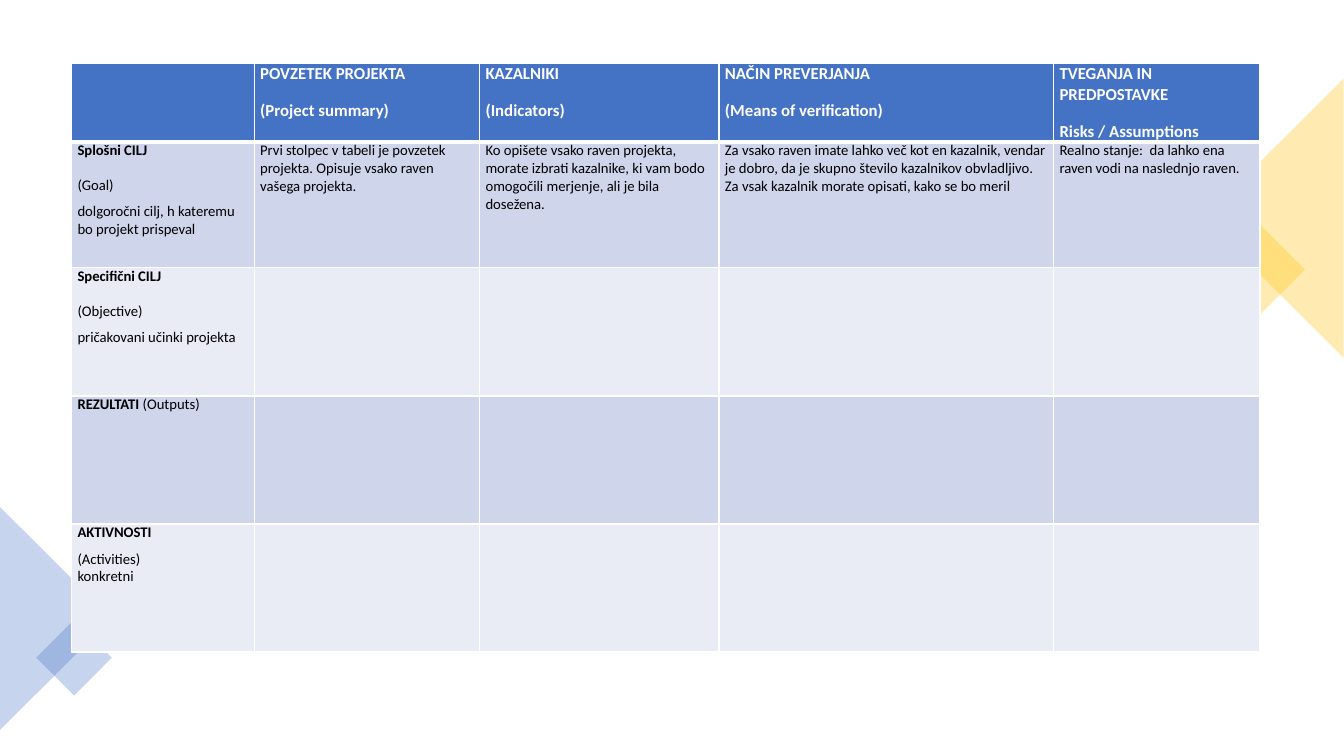
from lxml import etree
from pptx import Presentation
from pptx.dml.color import RGBColor
from pptx.enum import shapes
from pptx.oxml import ns
from pptx.util import Pt

BLUE = RGBColor(0x44, 0x72, 0xC4)
GOLD = RGBColor(0xFF, 0xC0, 0x00)
WHITE = RGBColor(0xFF, 0xFF, 0xFF)
BLACK = RGBColor(0, 0, 0)
BANDS = [RGBColor(0xCF, 0xD5, 0xEA), RGBColor(0xE9, 0xEB, 0xF5)]
FONT = "Calibri"

# Content: each cell is a list of paragraphs (bold part, plain part, space around)
HEADINGS = [
    [],
    [("POVZETEK PROJEKTA", "", 6), ("(Project summary)", "", 6)],
    [("KAZALNIKI", "", 6), ("(Indicators)", "", 6)],
    [("NAČIN PREVERJANJA", "", 6), ("(Means of verification)", "", 6)],
    [("TVEGANJA IN PREDPOSTAVKE", "", 6), ("Risks / Assumptions", "", 6)],
]
LEVELS = [
    [
        [("Splošni CILJ", "", 6), ("", "(Goal)", 6),
         ("", "dolgoročni cilj, h kateremu bo projekt prispeval", 0)],
        [("", "Prvi stolpec v tabeli je povzetek projekta. Opisuje vsako raven "
              "vašega projekta.", 6)],
        [("", "Ko opišete vsako raven projekta, morate izbrati kazalnike, ki vam "
              "bodo omogočili merjenje, ali je bila dosežena.", 6)],
        [("", "Za vsako raven imate lahko več kot en kazalnik, vendar je dobro, da "
              "je skupno število kazalnikov obvladljivo. Za vsak kazalnik morate "
              "opisati, kako se bo meril", 0)],
        [("", "Realno stanje:  da lahko ena raven vodi na naslednjo raven.", 0)],
    ],
    [[("Specifični CILJ", "", 6), ("", "(Objective)", 6),
      ("", "pričakovani učinki projekta", 0)]],
    [[("REZULTATI ", "(Outputs)", 6)]],
    [[("AKTIVNOSTI", "", 6), ("", "(Activities)", 0), ("", "konkretni", 0)]],
]
COLUMN_WIDTHS = [130.5, 161, 171, 239, 147.5]
ROW_HEIGHTS = [52, 90, 91.5, 91.5, 91.5]
TABLE_LEFT, TABLE_TOP = 51.1, 45.4

# Corner decoration: preset, left, top, width, height, rotation, colour
DIAMOND, TRIANGLE = shapes.MSO_SHAPE.RECTANGLE, shapes.MSO_SHAPE.ISOSCELES_TRIANGLE
CORNERS = [
    (DIAMOND, 870.5, 167, 51.1, 51.1, 45, GOLD),
    (TRIANGLE, 810, 105.8, 199.4, 100.1, 270, GOLD),
    (TRIANGLE, -39.6, 401.8, 159.1, 79.9, 90, BLUE),
    (DIAMOND, 33.8, 450.7, 38.2, 38.2, 45, BLUE),
]


def add_corner(slide, preset, left, top, width, height, rotation, color):
    corner = slide.shapes.add_shape(preset, Pt(left), Pt(top), Pt(width), Pt(height))
    corner.rotation = rotation
    corner.shadow.inherit = False
    corner.line.fill.background()
    corner.fill.solid()
    corner.fill.fore_color.rgb = color
    solid = corner.fill._xPr.find(ns.qn("a:solidFill"))
    etree.SubElement(solid[0], ns.qn("a:alpha"), val="30000")


def add_borders(cell, top, bottom):
    properties = cell._tc.get_or_add_tcPr()
    for side, width in (("L", 1), ("R", 1), ("T", top), ("B", bottom)):
        line = etree.SubElement(properties, ns.qn(f"a:ln{side}"), w=str(Pt(width)))
        solid = etree.SubElement(line, ns.qn("a:solidFill"))
        etree.SubElement(solid, ns.qn("a:srgbClr"), val=str(WHITE))


def write_cell(cell, content, size, color):
    cell.margin_left = cell.margin_right = Pt(4.3)
    cell.margin_top = cell.margin_bottom = Pt(0)
    for index, (strong, plain, space) in enumerate(content):
        frame = cell.text_frame
        paragraph = frame.add_paragraph() if index else frame.paragraphs[0]
        paragraph.space_before = paragraph.space_after = Pt(space)
        for wording, bold in ((strong, True), (plain, False)):
            if wording:
                run = paragraph.add_run()
                run.text = wording
                run.font.name, run.font.size = FONT, Pt(size)
                run.font.bold = bold
                run.font.color.rgb = color


def add_matrix(slide):
    rows = [HEADINGS] + LEVELS
    matrix = slide.shapes.add_table(
        len(rows), len(COLUMN_WIDTHS), Pt(TABLE_LEFT), Pt(TABLE_TOP),
        Pt(sum(COLUMN_WIDTHS)), Pt(sum(ROW_HEIGHTS))).table
    for column, width in zip(matrix.columns, COLUMN_WIDTHS):
        column.width = Pt(width)
    for r, contents in enumerate(rows):
        matrix.rows[r].height = Pt(ROW_HEIGHTS[r])
        for c, cell in enumerate(matrix.rows[r].cells):
            add_borders(cell, 3 if r == 1 else 1, 3 if r == 0 else 1)
            cell.fill.solid()
            cell.fill.fore_color.rgb = BANDS[(r - 1) % 2] if r else BLUE
            if c < len(contents) and contents[c]:
                write_cell(cell, contents[c], 10.5 if r else 12, BLACK if r else WHITE)


def main():
    deck = Presentation()
    deck.slide_width, deck.slide_height = Pt(960), Pt(540)
    slide = deck.slides.add_slide(deck.slide_layouts[6])
    for corner in CORNERS:
        add_corner(slide, *corner)
    add_matrix(slide)
    deck.save("out.pptx")


if __name__ == "__main__":
    main()
